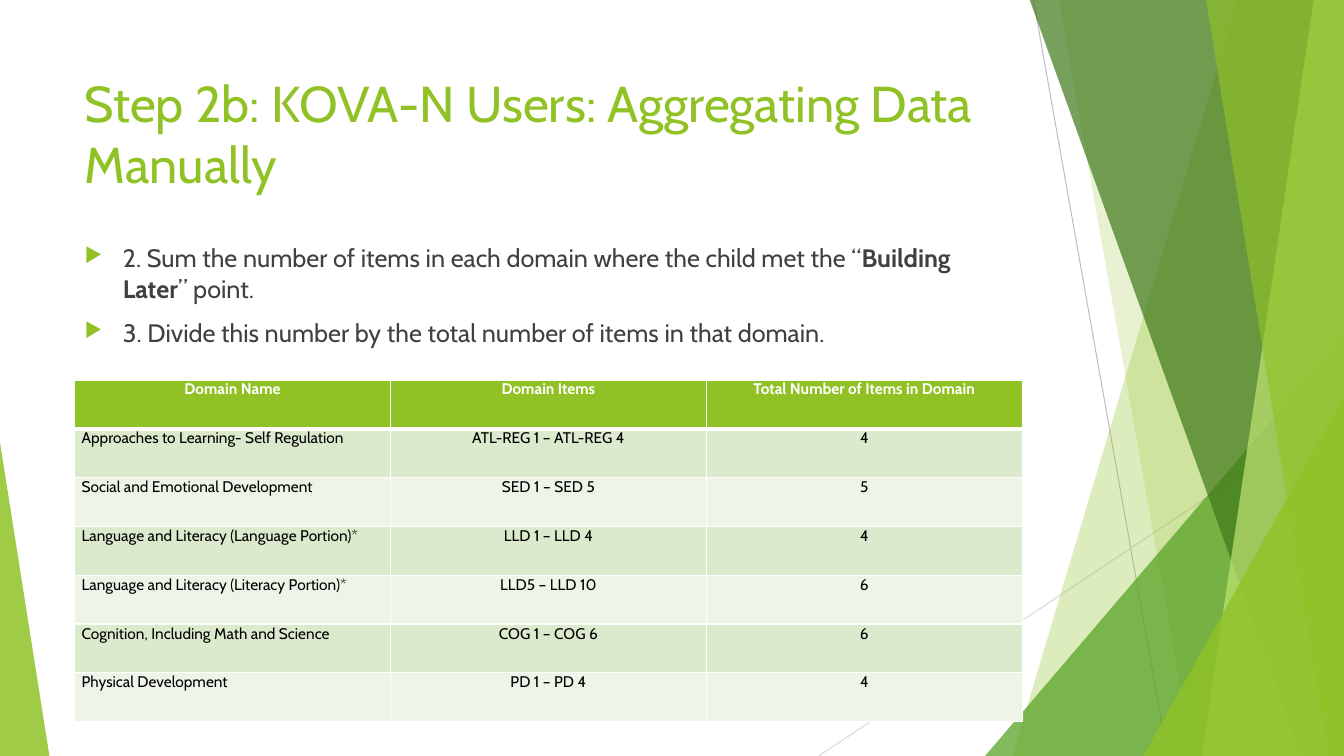
from lxml import etree
from pptx import Presentation
from pptx.dml import color
from pptx.enum import shapes, text
from pptx.oxml import ns
from pptx.util import Inches, Pt

FONT = "Cabin"
GREEN = "90C226"
WHITE = "FFFFFF"

# Slanted panels: top left x, bottom left x, colour, opacity in percent
BACK_PANELS = [(12.28, 10.04, GREEN, 30), (10.5, 11.83, GREEN, 20)]
FRONT_PANELS = [(10.21, 12.91, "3F7819", 70), (13.03, 11.92, "C0E474", 70),
                (11.96, 13.18, GREEN, 65)]

STEPS = [
    [("2. Sum the number of items in each domain where the child met the “", False),
     ("Building Later", True), ("” point.", False)],
    [("3. Divide this number by the total number of items in that domain.", False)],
]

DOMAINS = [
    ("Domain Name", "Domain Items", "Total Number of Items in Domain"),
    ("Approaches to Learning- Self Regulation", "ATL-REG 1 – ATL-REG 4", "4"),
    ("Social and Emotional Development", "SED 1 – SED 5", "5"),
    ("Language and Literacy (Language Portion)*", "LLD 1 – LLD 4", "4"),
    ("Language and Literacy (Literacy Portion)*", "LLD5 – LLD 10", "6"),
    ("Cognition, Including Math and Science", "COG 1 – COG 6", "6"),
    ("Physical Development", "PD 1 – PD 4", "4"),
]


def rgb(value):
    return color.RGBColor.from_string(value)


def add_node(parent, tag, **attributes):
    return etree.SubElement(parent, ns.qn(tag), attributes)


def set_font(para, size, value, bold=False):
    para.font.name = FONT
    para.font.size = Pt(size)
    para.font.color.rgb = rgb(value)
    para.font.bold = bold


def paint(shape, value, opacity):
    shape.shadow.inherit = False
    shape.line.fill.background()
    shape.fill.solid()
    shape.fill.fore_color.rgb = rgb(value)
    fill_color = shape.fill._xPr.find(".//" + ns.qn("a:srgbClr"))
    add_node(fill_color, "a:alpha", val=str(opacity * 1000))


def add_line(page, start, end, value):
    line = page.shapes.add_connector(
        shapes.MSO_CONNECTOR.STRAIGHT, *map(Inches, start + end))
    line.line.color.rgb = rgb(value)
    line.line.width = Pt(0.75)
    add_node(line._element.spPr, "a:effectLst")


def add_panel(page, top_x, bottom_x, value, opacity):
    builder = page.shapes.build_freeform(Inches(top_x), Inches(-0.01))
    corners = [(13.33, -0.01), (13.33, 7.5), (bottom_x, 7.5)]
    builder.add_line_segments([(Inches(x), Inches(y)) for x, y in corners])
    paint(builder.convert_to_shape(), value, opacity)


def add_triangle(page, left, top, width, apex, value, opacity):
    triangle = page.shapes.add_shape(
        shapes.MSO_SHAPE.ISOSCELES_TRIANGLE,
        Inches(left), Inches(top), Inches(width), Inches(7.5 - top))
    triangle.adjustments[0] = apex
    paint(triangle, value, opacity)


def add_decoration(page):
    add_line(page, (10.25, 0), (11.58, 7.5), "BFBFBF")
    add_line(page, (13.33, 4.03), (8.12, 7.5), "D9D9D9")
    for panel in BACK_PANELS:
        add_panel(page, *panel)
    add_triangle(page, 9.77, 3.33, 3.56, 1, "54A021", 72)
    for panel in FRONT_PANELS:
        add_panel(page, *panel)
    add_triangle(page, 11.34, 3.93, 1.99, 1, GREEN, 80)
    add_triangle(page, 0, 4.39, 0.49, 0, GREEN, 85)


def set_title(page, wording):
    title = page.shapes.title
    title.left, title.top = Inches(0.74), Inches(0.67)
    title.width, title.height = Inches(9.4), Inches(1.44)
    frame = title.text_frame
    frame.text = wording
    frame.word_wrap = True
    frame.auto_size = text.MSO_AUTO_SIZE.NONE
    frame.vertical_anchor = text.MSO_ANCHOR.TOP
    para = frame.paragraphs[0]
    para.alignment = text.PP_ALIGN.LEFT
    set_font(para, 36, GREEN)


def add_bullet(para):
    props = para._p.get_or_add_pPr()
    props.set("marL", str(Inches(0.38)))
    props.set("indent", str(Inches(-0.38)))
    bullet = etree.Element("bullet")
    add_node(add_node(bullet, "a:buClr"), "a:srgbClr", val=GREEN)
    add_node(bullet, "a:buSzPct", val="80000")
    add_node(bullet, "a:buChar", char="▶")
    # Bullet settings must stand before the font defaults
    defaults = props.find(ns.qn("a:defRPr"))
    for node in list(bullet):
        defaults.addprevious(node)


def add_steps(page, steps):
    box = page.shapes.add_textbox(Inches(0.74), Inches(2.36), Inches(9.4), Inches(4.24))
    frame = box.text_frame
    frame.word_wrap = True
    for index, spans in enumerate(steps):
        para = frame.add_paragraph() if index else frame.paragraphs[0]
        para.space_before = Pt(10)
        set_font(para, 18, "404040")
        add_bullet(para)
        for wording, bold in spans:
            span = para.add_run()
            span.text = wording
            span.font.bold = bold


def set_borders(cell, row):
    props = cell._tc.get_or_add_tcPr()
    widths = {"L": 1, "R": 1, "T": 3 if row == 1 else 1, "B": 3 if row == 0 else 1}
    for position, (side, width) in enumerate(widths.items()):
        line = etree.Element(ns.qn("a:ln" + side), w=str(Pt(width)))
        add_node(add_node(line, "a:solidFill"), "a:srgbClr", val=WHITE)
        props.insert(position, line)


def fill_cell(cell, wording, row, column):
    cell.margin_left = cell.margin_right = Inches(0.07)
    cell.margin_top = cell.margin_bottom = 0
    cell.text = wording
    para = cell.text_frame.paragraphs[0]
    centred = row == 0 or column > 0
    para.alignment = text.PP_ALIGN.CENTER if centred else text.PP_ALIGN.LEFT
    set_font(para, 11, WHITE if row == 0 else "000000", bold=row == 0)
    band = "DBE9CD" if row % 2 else "EEF4E8"
    cell.fill.solid()
    cell.fill.fore_color.rgb = rgb(GREEN if row == 0 else band)
    set_borders(cell, row)


def add_domain_table(page, rows):
    table = page.shapes.add_table(
        len(rows), len(rows[0]),
        Inches(0.74), Inches(3.77), Inches(9.4), Inches(3.39)).table
    for row, wordings in enumerate(rows):
        for column, wording in enumerate(wordings):
            fill_cell(table.cell(row, column), wording, row, column)


def main():
    deck = Presentation()
    deck.slide_width, deck.slide_height = Inches(13.33), Inches(7.5)
    page = deck.slides.add_slide(deck.slide_layouts.get_by_name("Title Only"))
    add_decoration(page)
    set_title(page, "Step 2b: KOVA-N Users: Aggregating Data Manually")
    add_steps(page, STEPS)
    add_domain_table(page, DOMAINS)
    deck.save("out.pptx")


if __name__ == "__main__":
    main()
